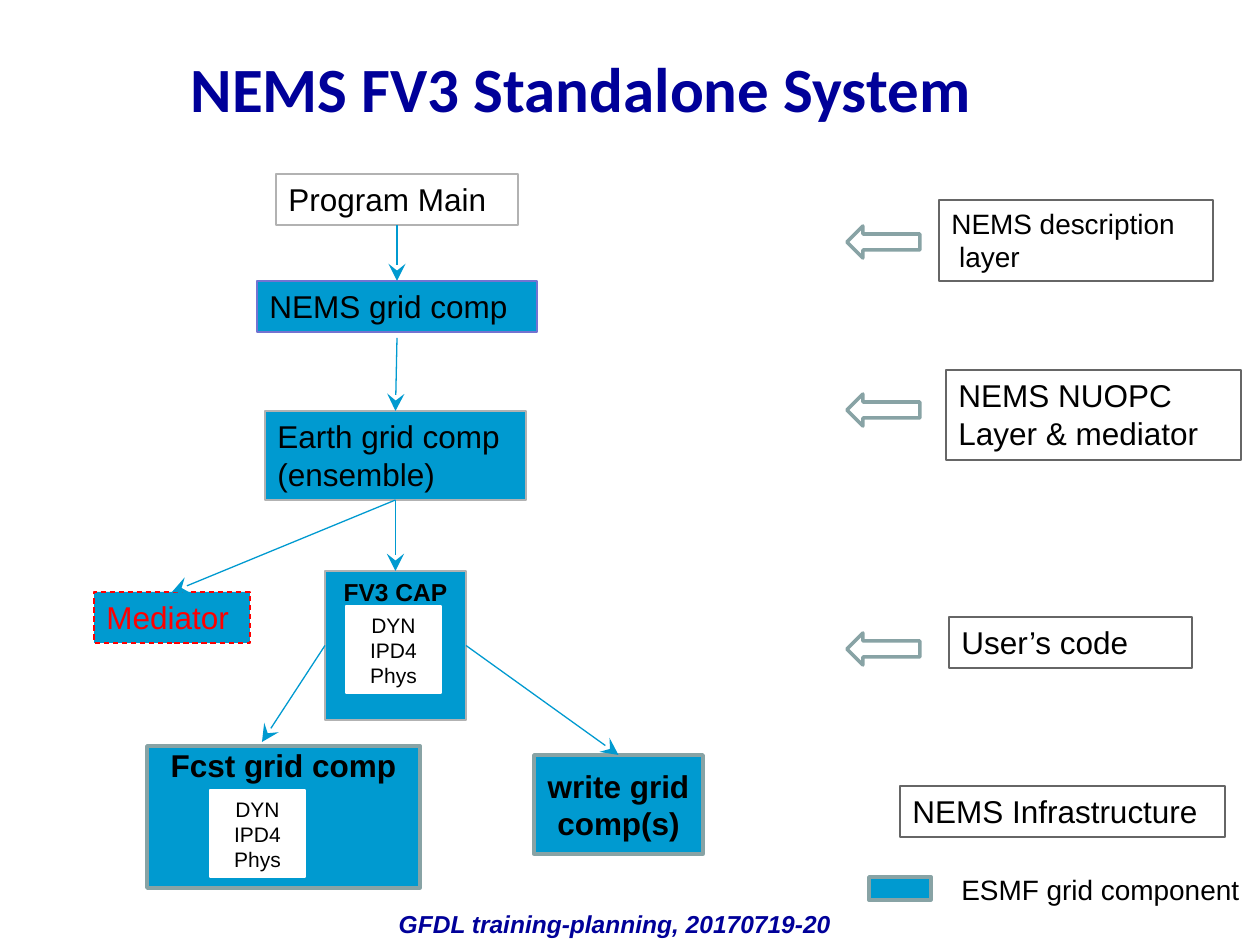
from lxml import etree
from pptx import Presentation
from pptx.dml.color import RGBColor
from pptx.enum.dml import MSO_LINE
from pptx.enum.shapes import MSO_CONNECTOR, MSO_SHAPE
from pptx.enum.text import MSO_ANCHOR, MSO_AUTO_SIZE, PP_ALIGN
from pptx.oxml.ns import qn
from pptx.util import Emu, Pt

RECTANGLE, LEFT_ARROW = MSO_SHAPE.RECTANGLE, MSO_SHAPE.LEFT_ARROW
STRAIGHT = MSO_CONNECTOR.STRAIGHT
DASH = MSO_LINE.DASH
TOP, MIDDLE = MSO_ANCHOR.TOP, MSO_ANCHOR.MIDDLE
LEFT, CENTER = PP_ALIGN.LEFT, PP_ALIGN.CENTER
SCALE = 914400 / 126
COLORS = {
    "navy": "000099",
    "black": "000000",
    "white": "FFFFFF",
    "blue": "009AD0",
    "red": "FF0000",
    "violet": "7373D1",
    "silver": "B2B2B2",
    "gray": "666666",
    "sage": "88A3A5",
}


def px(*lengths):
    return [Emu(round(length * SCALE)) for length in lengths]


def write(shape, lines, size, color="black", bold=False, italic=False,
          align=LEFT, anchor=TOP, font="Arial"):
    frame = shape.text_frame
    frame.word_wrap = True
    frame.auto_size = MSO_AUTO_SIZE.NONE
    frame.vertical_anchor = anchor
    for index, line in enumerate(lines):
        para = frame.add_paragraph() if index else frame.paragraphs[0]
        para.alignment = align
        span = para.add_run()
        span.text = line
        span.font.name = font
        span.font.size = Pt(size)
        span.font.bold = bold
        span.font.italic = italic
        span.font.color.rgb = RGBColor.from_string(COLORS[color])


deck = Presentation()
deck.slide_width, deck.slide_height = px(1260, 945)
page = deck.slides.add_slide(deck.slide_layouts[5])

title = page.shapes.title
title.left, title.top, title.width, title.height = px(178, 43, 893, 89)
write(title, ["NEMS FV3 Standalone System"], 36, "navy", bold=True, font="Calibri")

core = ["DYN", "IPD4", "Phys"]
heading = {"bold": True, "align": CENTER}
boxes = [
    ("description", (939, 200, 274, 81), None, "gray", 0.75, ["NEMS description", " layer"], 16, {}),
    ("nuopc", (946, 370, 295, 90), None, "gray", 0.75, ["NEMS NUOPC", "Layer & mediator"], 18, {}),
    ("user", (949, 617, 243, 51), None, "gray", 0.75, ["User’s code"], 18, {}),
    ("infrastructure", (900, 786, 325, 51), None, "gray", 0.75, ["NEMS Infrastructure"], 18, {}),
    ("main", (276, 174, 242, 51), None, "silver", 0.75, ["Program Main"], 18, {}),
    ("nems", (257, 281, 280, 51), "blue", "violet", 0.75, ["NEMS grid comp"], 18, {}),
    ("earth", (265, 411, 261, 89), "blue", "silver", 0.75, ["Earth grid comp", "(ensemble)"], 18, {}),
    ("cap", (325, 571, 141, 149), "blue", "silver", 0.75, ["FV3 CAP"], 14, heading),
    ("mediator", (94, 592, 156, 51), "blue", "red", 0.75, ["Mediator"], 18, {"color": "red"}),
    ("cap core", (346, 606, 95, 87), "white", "white", 0.75, core, 12, {"align": CENTER}),
    ("forecast", (147, 746, 273, 142), "blue", "sage", 2, ["Fcst grid comp"], 18, heading),
    ("forecast core", (210, 790, 95, 87), "white", "white", 0.75, core, 12, {"align": CENTER}),
    ("write", (534, 755, 169, 99), "blue", "sage", 2, ["write grid comp(s)"], 18,
     {**heading, "anchor": MIDDLE}),
    ("legend", (869, 877, 62, 23), "blue", "sage", 2, [], 18, {}),
]
arrows = [("arrow", (847, top, 73, 32), None, "sage", 2, [], 18, {}) for top in (226, 394, 633)]

shapes = {}
for name, place, fill, line, weight, lines, size, style in boxes + arrows:
    kind = LEFT_ARROW if name == "arrow" else RECTANGLE
    shape = page.shapes.add_shape(kind, *px(*place))
    shape.shadow.inherit = False
    if fill:
        shape.fill.solid()
        shape.fill.fore_color.rgb = RGBColor.from_string(COLORS[fill])
    else:
        shape.fill.background()
    shape.line.color.rgb = RGBColor.from_string(COLORS[line])
    shape.line.width = Pt(weight)
    if lines:
        write(shape, lines, size, **style)
    shapes[name] = shape
shapes["mediator"].line.dash_style = DASH
shapes["forecast"].text_frame.margin_top = 0

labels = [
    ((949, 866, 311, 47), "ESMF grid component", 16, {}),
    ((116, 903, 998, 42), "GFDL training-planning, 20170719-20", 14,
     {"color": "navy", "italic": True, **heading}),
]
for place, text, size, style in labels:
    write(page.shapes.add_textbox(*px(*place)), [text], size, **style)

links = [
    ((397, 225, 397, 281), ("main", 2), ("nems", 0)),
    ((397, 338, 396, 411), None, ("earth", 0)),
    ((396, 500, 172, 592), ("earth", 2), ("mediator", 0)),
    ((396, 500, 396, 571), ("earth", 2), ("cap", 0)),
    ((325, 645, 262, 742), ("cap", 1), None),
    ((466, 645, 618, 755), ("cap", 3), ("write", 0)),
]
for ends, start, finish in links:
    link = page.shapes.add_connector(STRAIGHT, *px(*ends))
    if start:
        link.begin_connect(shapes[start[0]], start[1])
    if finish:
        link.end_connect(shapes[finish[0]], finish[1])
    link.line.color.rgb = RGBColor.from_string(COLORS["blue"])
    link.line.width = Pt(0.75)
    etree.SubElement(link.line._get_or_add_ln(), qn("a:tailEnd"), type="stealth", w="lg", len="lg")
    etree.SubElement(link._element.spPr, qn("a:effectLst"))

deck.save("out.pptx")
